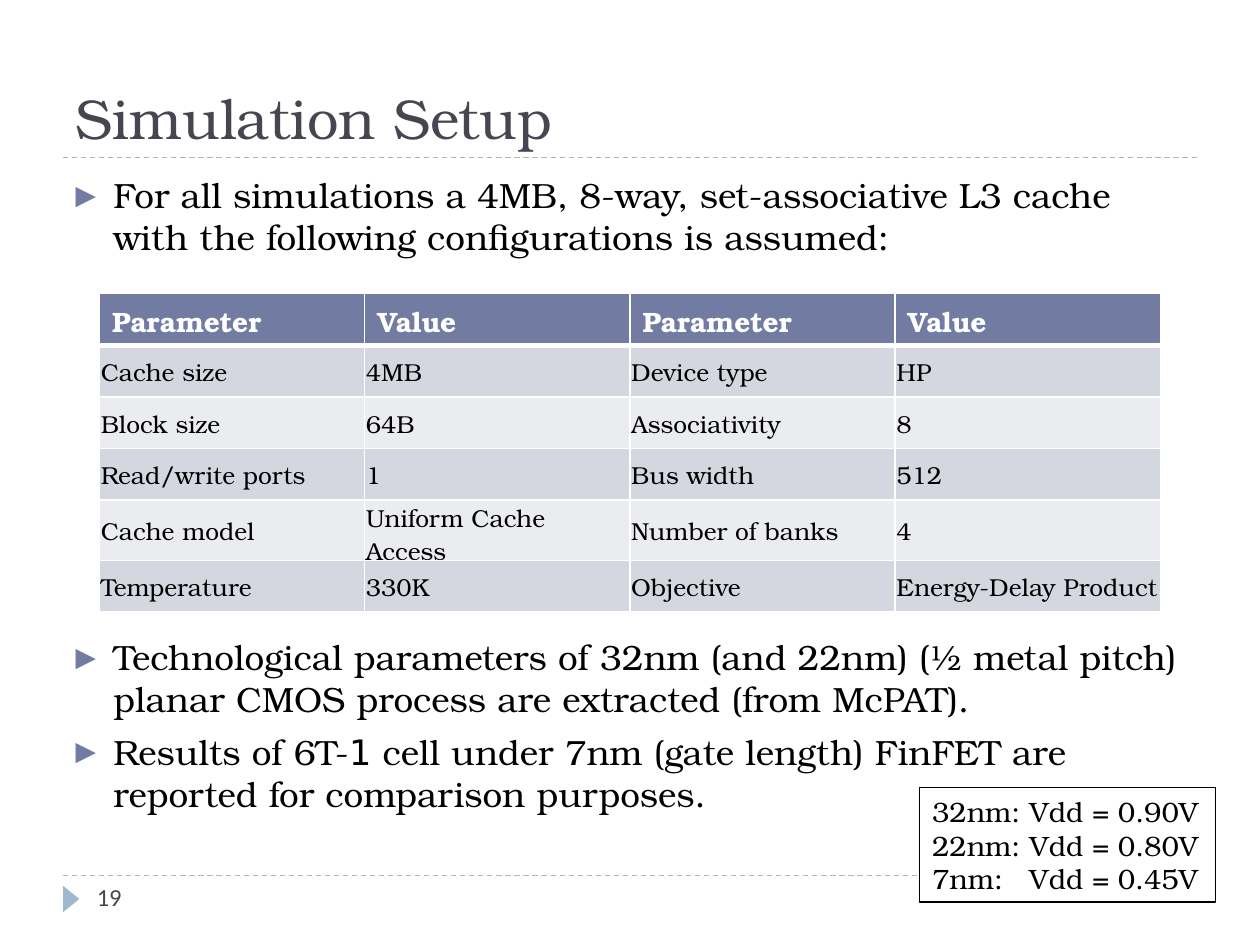
from lxml import etree
from pptx import Presentation
from pptx.dml.color import RGBColor
from pptx.enum import dml, shapes, text
from pptx.oxml import ns
from pptx.util import Inches, Pt

SERIF = "TeX Gyre Bonum"
INK, SLATE, SKY, WHITE, BLACK = "464653", "727CA3", "9FB8CD", "FFFFFF", "000000"


def style(para, size, color, font=SERIF, bold=False):
    for run in para.runs:
        run.font.size = Pt(size)
        run.font.name = font
        run.font.bold = bold
        run.font.color.rgb = RGBColor.from_string(color)


def add(parent, tag, **attrs):
    """Append a drawing element such as "a:buChar" and return it."""
    return etree.SubElement(parent, ns.qn(tag), attrs)


deck = Presentation()
deck.slide_width, deck.slide_height = Inches(10), Inches(7.5)
slide = deck.slides.add_slide(deck.slide_layouts[1])
items = slide.shapes

# Dashed rules
for y in (6.95, 1.25):
    rule = items.add_connector(
        shapes.MSO_CONNECTOR.STRAIGHT, Inches(0.5), Inches(y), Inches(9.5), Inches(y))
    rule.line.color.rgb = RGBColor.from_string("B4B4B4")
    rule.line.width = Pt(0.75)
    rule.line.dash_style = dml.MSO_LINE.DASH
    add(rule._element.spPr, "a:effectLst")

# Page marker and number
mark = items.add_shape(
    shapes.MSO_SHAPE.ISOSCELES_TRIANGLE,
    Inches(0.46), Inches(7.07), Inches(0.21), Inches(0.13))
mark.rotation = 90
mark.shadow.inherit = False
mark.fill.solid()
mark.fill.fore_color.rgb = RGBColor.from_string(SKY)
mark.line.fill.background()

page = items.add_textbox(Inches(0.67), Inches(6.95), Inches(2.17), Inches(0.4))
page.text_frame.word_wrap = True
page.text_frame.text = "19"
style(page.text_frame.paragraphs[0], 14, INK, "Calibri")

# Title
title = items.title
title.left, title.top = Inches(0.5), Inches(0.17)
title.width, title.height = Inches(9), Inches(1.08)
frame = title.text_frame
frame.text = "Simulation Setup"
frame.auto_size = text.MSO_AUTO_SIZE.NONE
frame.vertical_anchor = text.MSO_ANCHOR.BOTTOM
frame.paragraphs[0].alignment = text.PP_ALIGN.LEFT
style(frame.paragraphs[0], 32, INK)

# Bullets; the second one starts below the table
body = slide.placeholders[1]
body.left, body.top = Inches(0.5), Inches(1.33)
body.width, body.height = Inches(9), Inches(5.4)
frame = body.text_frame
frame.auto_size = text.MSO_AUTO_SIZE.NONE
bullets = [
    (6, ["For all simulations a 4MB, 8-way, set-associative L3 cache "
         "with the following configurations is assumed:"]),
    (216, ["Technological parameters of 32nm (and 22nm) (½ metal pitch) "
           "planar CMOS process are extracted (from McPAT)."]),
    (6, ["Results of 6T-", "1 ",
         "cell under 7nm (gate length) FinFET are reported for comparison purposes."]),
]
for i, (gap, parts) in enumerate(bullets):
    para = frame.add_paragraph() if i else frame.paragraphs[0]
    for part in parts:
        para.add_run().text = part
    style(para, 20, BLACK)
    para.space_before = Pt(gap)
    props = para._p.get_or_add_pPr()
    props.set("marL", str(Inches(0.3)))
    props.set("indent", str(Inches(-0.3)))
    add(add(props, "a:buClr"), "a:srgbClr", val=SLATE)
    add(props, "a:buSzPct", val="76000")
    add(props, "a:buFont", typeface="DejaVu Sans")
    add(props, "a:buChar", char="▶")
frame.paragraphs[2].runs[1].font.name = "DejaVu Sans"

# Configuration table
rows = [
    ("Parameter", "Value", "Parameter", "Value"),
    ("Cache size", "4MB", "Device type", "HP"),
    ("Block size", "64B", "Associativity", "8"),
    ("Read/write ports", "1", "Bus width", "512"),
    ("Cache model", "Uniform Cache Access", "Number of banks", "4"),
    ("Temperature", "330K", "Objective", "Energy-Delay Product"),
]
grid = items.add_table(
    len(rows), 4, Inches(0.79), Inches(2.33), Inches(8.42), Inches(2.46)).table
for row in grid.rows:
    row.height = Inches(0.41)
for r, row in enumerate(rows):
    for c, word in enumerate(row):
        cell = grid.cell(r, c)
        cell.text = word
        para = cell.text_frame.paragraphs[0]
        if r == 0:
            fill = SLATE
            style(para, 16, WHITE, bold=True)
        else:
            fill = "D5D7E0" if r % 2 else "EBECF0"
            style(para, 14, BLACK)
            cell.vertical_anchor = text.MSO_ANCHOR.MIDDLE
            cell.margin_left = cell.margin_right = cell.margin_top = Inches(0.01)
            cell.margin_bottom = 0
        for side in "LRTB":
            thick = (r, side) in ((0, "B"), (1, "T"))
            edge = add(cell._tc.get_or_add_tcPr(), "a:ln" + side,
                       w=str(Pt(3 if thick else 1)))
            add(add(edge, "a:solidFill"), "a:srgbClr", val=WHITE)
        cell.fill.solid()
        cell.fill.fore_color.rgb = RGBColor.from_string(fill)

# Supply voltages
box = items.add_shape(
    shapes.MSO_SHAPE.RECTANGLE, Inches(7.3), Inches(6.25), Inches(2.35), Inches(0.91))
box.shadow.inherit = False
box.fill.solid()
box.fill.fore_color.rgb = RGBColor.from_string(WHITE)
box.line.color.rgb = RGBColor.from_string(BLACK)
box.line.width = Pt(0.75)
frame = box.text_frame
frame.word_wrap = True
frame.margin_right = Inches(0.02)
frame.text = "32nm: Vdd = 0.90V\n22nm: Vdd = 0.80V\n7nm:\tVdd = 0.45V"
for para in frame.paragraphs:
    para.alignment = text.PP_ALIGN.LEFT
    style(para, 16, BLACK)
    tabs = add(para._p.get_or_add_pPr(), "a:tabLst")
    add(tabs, "a:tab", pos=str(Inches(0.77)), algn="l")

deck.save("out.pptx")
